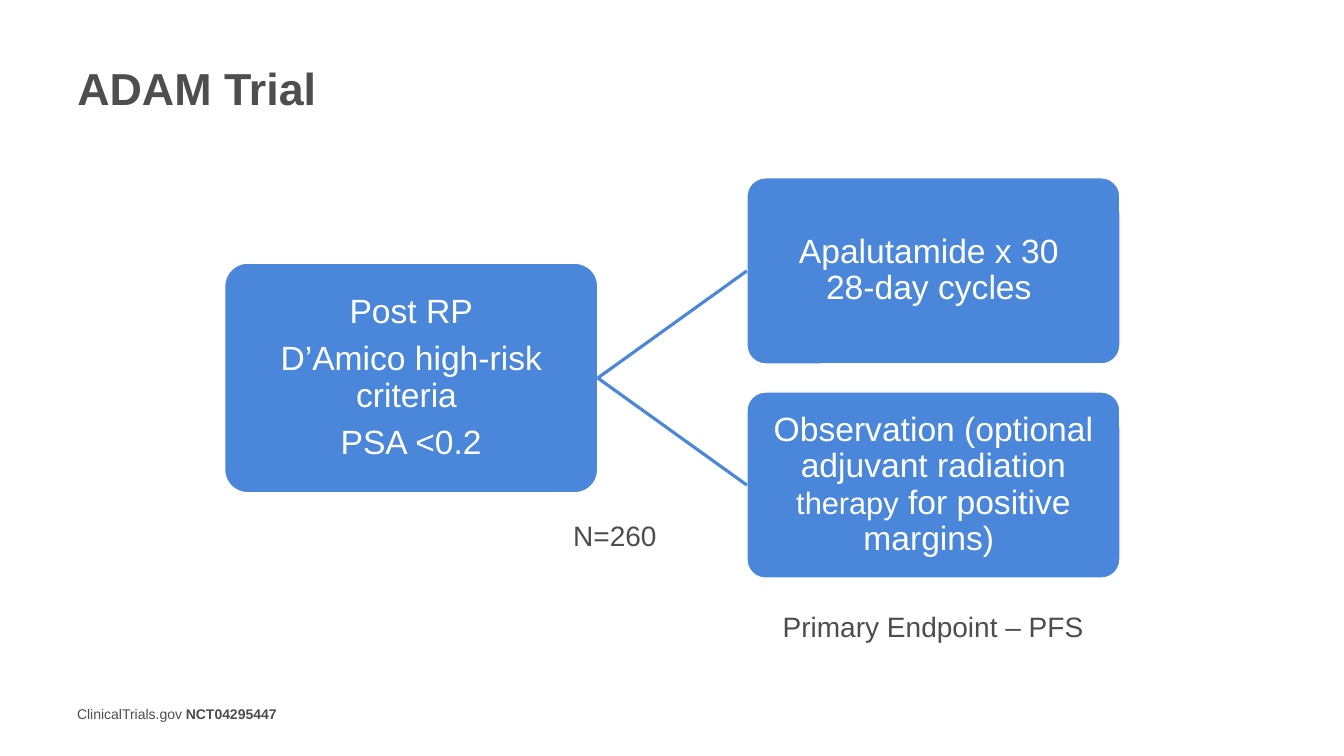
from lxml import etree
from pptx import Presentation
from pptx.dml.color import RGBColor
from pptx.enum import shapes, text
from pptx.util import Pt

BLUE, WHITE, GREY = "4A86D9", "FFFFFF", "4D4D4D"
LEFT, CENTER = text.PP_ALIGN.LEFT, text.PP_ALIGN.CENTER


def color(hex_code):
    return RGBColor.from_string(hex_code)


def set_format(target, values):
    """Set each attribute named in values on target."""
    for name, value in values.items():
        setattr(target, name, value)


class TrialPage:
    font = "Arial"

    def __init__(self, deck):
        self.page = deck.slides.add_slide(deck.slide_layouts[5])

    def fill_text(self, box, paragraphs, size, hex_code, para_format, frame_format):
        """Fill a box; each paragraph is a list of (words, font format) spans."""
        frame = box.text_frame
        set_format(frame, {"word_wrap": True, **frame_format})
        for index, spans in enumerate(paragraphs):
            para = frame.add_paragraph() if index else frame.paragraphs[0]
            set_format(para, para_format)
            for words, font_format in spans:
                for number, line in enumerate(words.split("\n")):
                    if number:
                        para.add_line_break()
                    span = para.add_run()
                    span.text = line
                    set_format(span.font, {"name": self.font, "size": Pt(size), **font_format})
                    span.font.color.rgb = color(hex_code)

    def title(self, words, left, top, width, height):
        box = self.page.shapes.title
        set_format(box, {"left": Pt(left), "top": Pt(top),
                         "width": Pt(width), "height": Pt(height)})
        self.fill_text(box, [[(words, {"bold": True})]], 32, "4D4E4D", {"alignment": LEFT},
                       {"vertical_anchor": text.MSO_ANCHOR.MIDDLE})

    def label(self, spans, left, top, width, height, size=20, align=CENTER):
        box = self.page.shapes.add_textbox(Pt(left), Pt(top), Pt(width), Pt(height))
        self.fill_text(box, [spans], size, GREY, {"alignment": align}, {})

    def card(self, paragraphs, left, top, width, height):
        box = self.page.shapes.add_shape(shapes.MSO_SHAPE.ROUNDED_RECTANGLE,
                                         Pt(left), Pt(top), Pt(width), Pt(height))
        box.adjustments[0] = 0.1
        box.shadow.inherit = False
        box.fill.solid()
        box.fill.fore_color.rgb = color(BLUE)
        box.line.color.rgb = color(WHITE)
        box.line.width = Pt(1)
        margins = {f"margin_{side}": Pt(6) for side in ("left", "top", "right", "bottom")}
        self.fill_text(box, paragraphs, 24, WHITE,
                       {"alignment": CENTER, "line_spacing": 0.9, "space_after": Pt(8)},
                       {"vertical_anchor": text.MSO_ANCHOR.MIDDLE, **margins})
        return box

    def branch(self, source, target):
        """Join the right side of source to the left side of target."""
        line = self.page.shapes.add_connector(shapes.MSO_CONNECTOR.STRAIGHT, 0, 0, 0, 0)
        line.begin_connect(source, 3)
        line.end_connect(target, 1)
        line.line.color.rgb = color(BLUE)
        line.line.width = Pt(2.25)
        properties = line._element.spPr
        namespace = properties.nsmap["a"]
        etree.SubElement(properties, f"{{{namespace}}}effectLst")


def main():
    deck = Presentation()
    set_format(deck, {"slide_width": Pt(960), "slide_height": Pt(540)})
    trial = TrialPage(deck)
    trial.title("ADAM Trial", 48, 16, 846, 93.5)

    card_width = 266.5
    patients = trial.card([[("Post RP", {})],
                           [("D’Amico high-risk criteria ", {})],
                           [("PSA <0.2", {})]], 160.5, 188, card_width, 164)
    arms = [
        [("Apalutamide x 30 \n28-day cycles ", {})],
        [("Observation (optional adjuvant radiation ", {}),
         ("therapy", {"size": Pt(22)}),
         (" for positive margins) ", {})],
    ]
    for row, arm in enumerate(arms):
        treatment = trial.card([arm], 533.5, 127 + row * 153, card_width, 133)
        trial.branch(patients, treatment)

    trial.label([("N=260 ", {})], 373, 366.5, 138, 31.5)
    trial.label([("Primary Endpoint – PFS ", {})], 549.5, 432, 234, 31.5)
    trial.label([("ClinicalTrials.gov ", {}), ("NCT04295447", {"bold": True})],
                48, 500.5, 846, 34.5, size=10, align=LEFT)
    deck.save("out.pptx")


if __name__ == "__main__":
    main()
